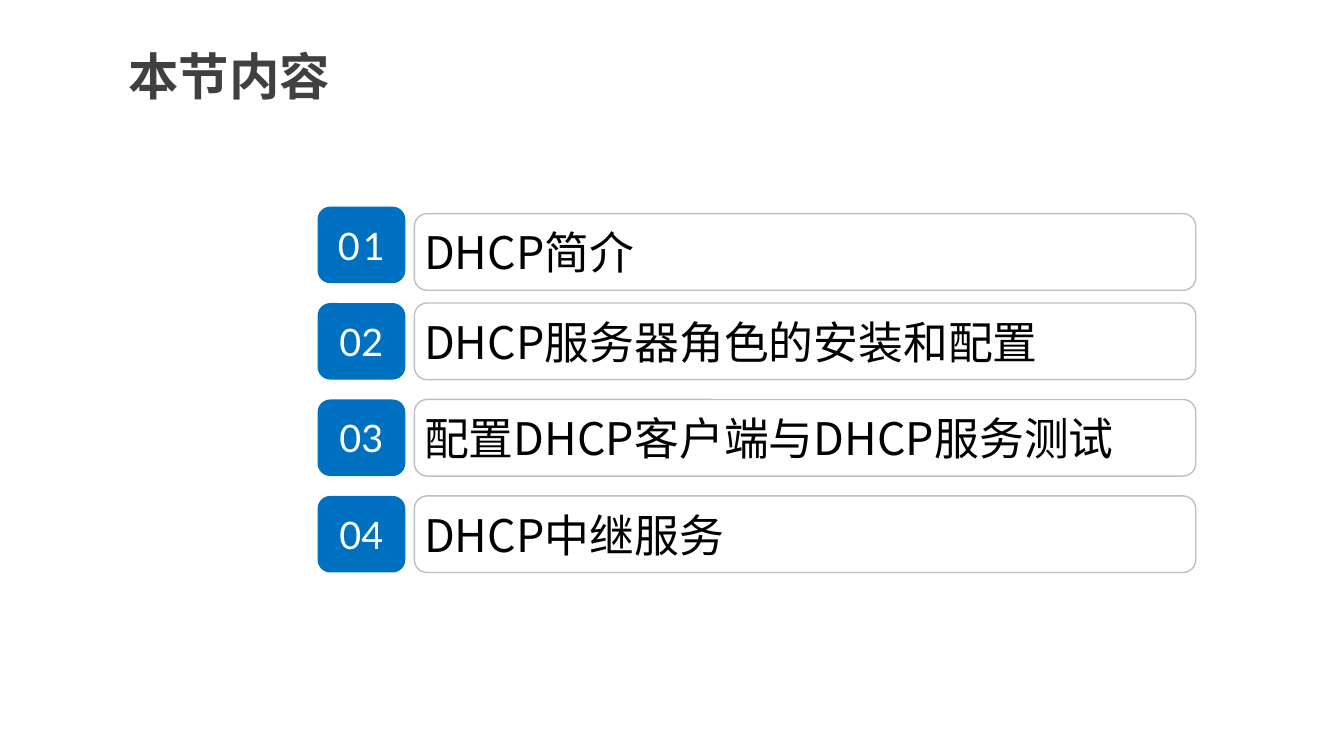
from pptx import Presentation
from pptx.dml.color import RGBColor
from pptx.enum.shapes import MSO_SHAPE
from pptx.enum.text import MSO_ANCHOR, PP_ALIGN
from pptx.oxml.ns import qn
from pptx.util import Inches, Pt

COLORS = {"title": "404040", "badge": "0070C0", "number": "FFFFFF",
          "border": "BFBFBF", "text": "000000"}
CJK_FONT = "Noto Sans CJK SC"
TOPICS = ["DHCP简介", "DHCP服务器角色的安装和配置",
          "配置DHCP客户端与DHCP服务测试", "DHCP中继服务"]


def rgb(name):
    return RGBColor.from_string(COLORS[name])


def add_run(p, text, font, size, color, bold=False):
    r = p.add_run()
    r.text = text
    r.font.name, r.font.size, r.font.bold = font, Pt(size), bold
    r.font.color.rgb = rgb(color)
    ea = r.font._element.makeelement(qn("a:ea"), {"typeface": CJK_FONT})
    r.font._element.find(qn("a:latin")).addnext(ea)
    return r


def add_round_box(s, x, y, w, h):
    sp = s.shapes.add_shape(MSO_SHAPE.ROUNDED_RECTANGLE,
                            Inches(x), Inches(y), Inches(w), Inches(h))
    sp.shadow.inherit = False
    sp.text_frame.vertical_anchor = MSO_ANCHOR.MIDDLE
    sp.text_frame.word_wrap = True
    return sp


def add_badge(s, number, x, y, w, h):
    sp = add_round_box(s, x, y, w, h)
    sp.fill.solid()
    sp.fill.fore_color.rgb = rgb("badge")
    sp.line.fill.background()
    p = sp.text_frame.paragraphs[0]
    p.alignment = PP_ALIGN.CENTER
    return add_run(p, f"{number:02d}", "Lato", 27, "number")


def add_topic(s, text, x, y, w, h):
    sp = add_round_box(s, x, y, w, h)
    sp.fill.background()
    sp.line.color.rgb = rgb("border")
    sp.line.width = Pt(1)
    tf = sp.text_frame
    tf.margin_left = tf.margin_right = Inches(0.06)
    tf.margin_top = tf.margin_bottom = Inches(0.03)
    p = tf.paragraphs[0]
    p.alignment = PP_ALIGN.LEFT
    add_run(p, text, CJK_FONT, 32, "text")


def add_title(s, text, x, y, w, h):
    sp = s.shapes.title
    sp.left, sp.top, sp.width, sp.height = map(Inches, (x, y, w, h))
    tf = sp.text_frame
    tf.word_wrap = False
    tf.vertical_anchor = MSO_ANCHOR.TOP
    p = tf.paragraphs[0]
    p.alignment = PP_ALIGN.CENTER
    add_run(p, text, "Arial", 36, "title", bold=True)


def add_agenda(s, topics, x, y, w, h):
    """Stack numbered topics in the box, four fifths of each step being a row."""
    row_h, badge_w, gap = 0.76, 0.87, 0.09
    step = (h - row_h) / (len(topics) - 1)
    topic_x = x + badge_w + gap
    for i, topic in enumerate(topics):
        top = y + i * step
        r = add_badge(s, i + 1, x, top, badge_w, row_h)
        drop = 0
        if i == 0:  # the first row is spaced wider and its topic sits lower
            r.font._element.set("spc", "220")
            drop = 0.07
        add_topic(s, topic, topic_x, top + drop, x + w - topic_x, row_h)


def main():
    prs = Presentation()
    prs.slide_width, prs.slide_height = Inches(13.33), Inches(7.5)
    s = prs.slides.add_slide(prs.slide_layouts[5])
    add_title(s, "本节内容", 1.13, 0.4, 2.29, 0.71)
    add_agenda(s, TOPICS, 3.15, 2.05, 8.71, 3.63)
    prs.save("out.pptx")


if __name__ == "__main__":
    main()
